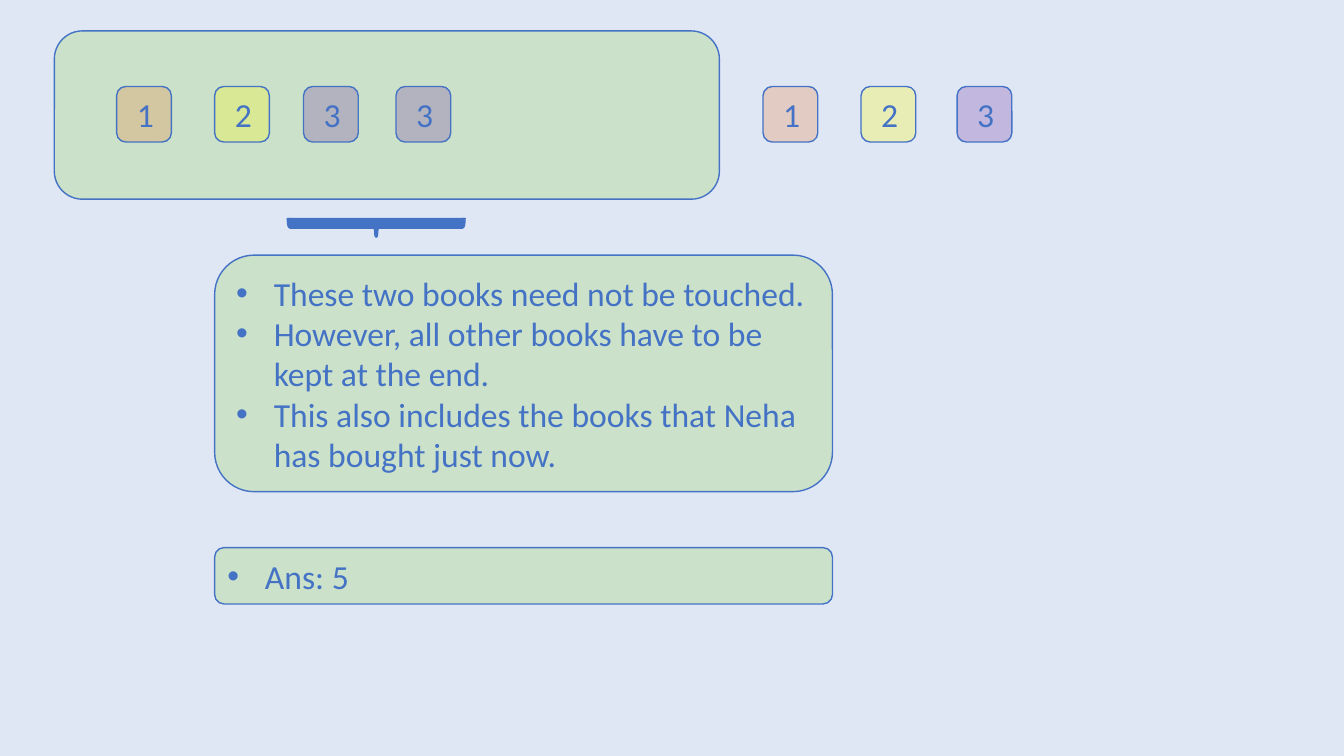
from dataclasses import dataclass

from lxml.etree import SubElement
from pptx import Presentation
from pptx.dml.color import RGBColor
from pptx.enum.shapes import MSO_SHAPE
from pptx.enum.text import MSO_ANCHOR, MSO_AUTO_SIZE, PP_ALIGN
from pptx.oxml.ns import qn
from pptx.shapes.autoshape import Shape
from pptx.slide import Slide
from pptx.util import Cm, Pt


@dataclass(frozen=True)
class Theme:
    background: str = "DFE7F5"
    blue: str = "4472C4"
    green: str = "92D050"
    orange: str = "ED7D31"
    yellow: str = "FFFF00"
    purple: str = "7030A0"
    tint: int = 26  # opacity of tinted fills, percent
    font: str = "Calibri"
    text_size: int = 24
    outline: float = 1
    brace_outline: float = 2.75


@dataclass(frozen=True)
class Panel:
    """A tinted rounded box; lengths are in centimetres."""
    left: float
    top: float
    width: float
    height: float
    color: str
    lines: tuple[str, ...] = ()
    bulleted: bool = False


THEME = Theme()
BULLET_INDENT = Cm(0.95)
BOOK_TOP, BOOK_WIDTH, BOOK_HEIGHT = 2.18, 1.38, 1.4
NOTE_LEFT, NOTE_WIDTH = 5.41, 15.57

BOOK_COLORS = {1: THEME.orange, 2: THEME.yellow, 3: THEME.purple}
# Left edge and number of each book: the stack first, then the new purchases
BOOKS = ((2.94, 1), (5.41, 2), (7.65, 3), (9.98, 3),
         (19.23, 1), (21.7, 2), (24.12, 3))

SHELF = Panel(1.37, 0.78, 16.76, 4.24, THEME.green)
EXPLANATION = Panel(NOTE_LEFT, 6.43, NOTE_WIDTH, 5.96, THEME.green, (
    "These two books need not be touched.",
    "However, all other books have to be kept at the end.",
    "This also includes the books that Neha has bought just now.",
), bulleted=True)
ANSWER = Panel(NOTE_LEFT, 13.8, NOTE_WIDTH, 1.42, THEME.green, ("Ans: 5",), bulleted=True)


def paint(shape: Shape, color: str, line_width: float) -> None:
    shape.shadow.inherit = False
    shape.fill.solid()
    shape.fill.fore_color.rgb = RGBColor.from_string(color)
    shape.line.color.rgb = RGBColor.from_string(THEME.blue)
    shape.line.width = Pt(line_width)


def make_translucent(shape: Shape, percent: int) -> None:
    color = shape.fill._xPr.find(qn("a:solidFill"))[0]
    SubElement(color, qn("a:alpha")).set("val", str(percent * 1000))


def write_lines(shape: Shape, panel: Panel) -> None:
    frame = shape.text_frame
    frame.text = "\n".join(panel.lines)
    frame.word_wrap = True
    frame.auto_size = MSO_AUTO_SIZE.SHAPE_TO_FIT_TEXT
    frame.vertical_anchor = MSO_ANCHOR.MIDDLE
    for paragraph in frame.paragraphs:
        paragraph.alignment = PP_ALIGN.LEFT
        for run in paragraph.runs:
            run.font.name = THEME.font
            run.font.size = Pt(THEME.text_size)
            run.font.color.rgb = RGBColor.from_string(THEME.blue)
        if panel.bulleted:
            properties = paragraph._p.get_or_add_pPr()
            properties.set("marL", str(BULLET_INDENT))
            properties.set("indent", str(-BULLET_INDENT))
            SubElement(properties, qn("a:buFont")).set("typeface", "Arial")
            SubElement(properties, qn("a:buChar")).set("char", "•")


def add_panel(slide: Slide, panel: Panel) -> None:
    shape = slide.shapes.add_shape(
        MSO_SHAPE.ROUNDED_RECTANGLE,
        Cm(panel.left), Cm(panel.top), Cm(panel.width), Cm(panel.height))
    paint(shape, panel.color, THEME.outline)
    make_translucent(shape, THEME.tint)
    if panel.lines:
        write_lines(shape, panel)


def add_brace(slide: Slide) -> None:
    brace = slide.shapes.add_shape(
        MSO_SHAPE.RIGHT_BRACE, Cm(9.25), Cm(3.51), Cm(0.46), Cm(4.42))
    brace.rotation = 90
    paint(brace, THEME.blue, THEME.brace_outline)


def main() -> None:
    presentation = Presentation()
    presentation.slide_width, presentation.slide_height = Cm(33.87), Cm(19.05)
    slide = presentation.slides.add_slide(presentation.slide_layouts[6])
    slide.background.fill.solid()
    slide.background.fill.fore_color.rgb = RGBColor.from_string(THEME.background)

    # Shelf with its books, and the new books beside it
    add_panel(slide, SHELF)
    for left, number in BOOKS:
        add_panel(slide, Panel(left, BOOK_TOP, BOOK_WIDTH, BOOK_HEIGHT,
                               BOOK_COLORS[number], (f" {number}",)))

    # Brace under the two untouched books, then the reasoning and answer
    add_brace(slide)
    add_panel(slide, EXPLANATION)
    add_panel(slide, ANSWER)

    presentation.save("out.pptx")


if __name__ == "__main__":
    main()
